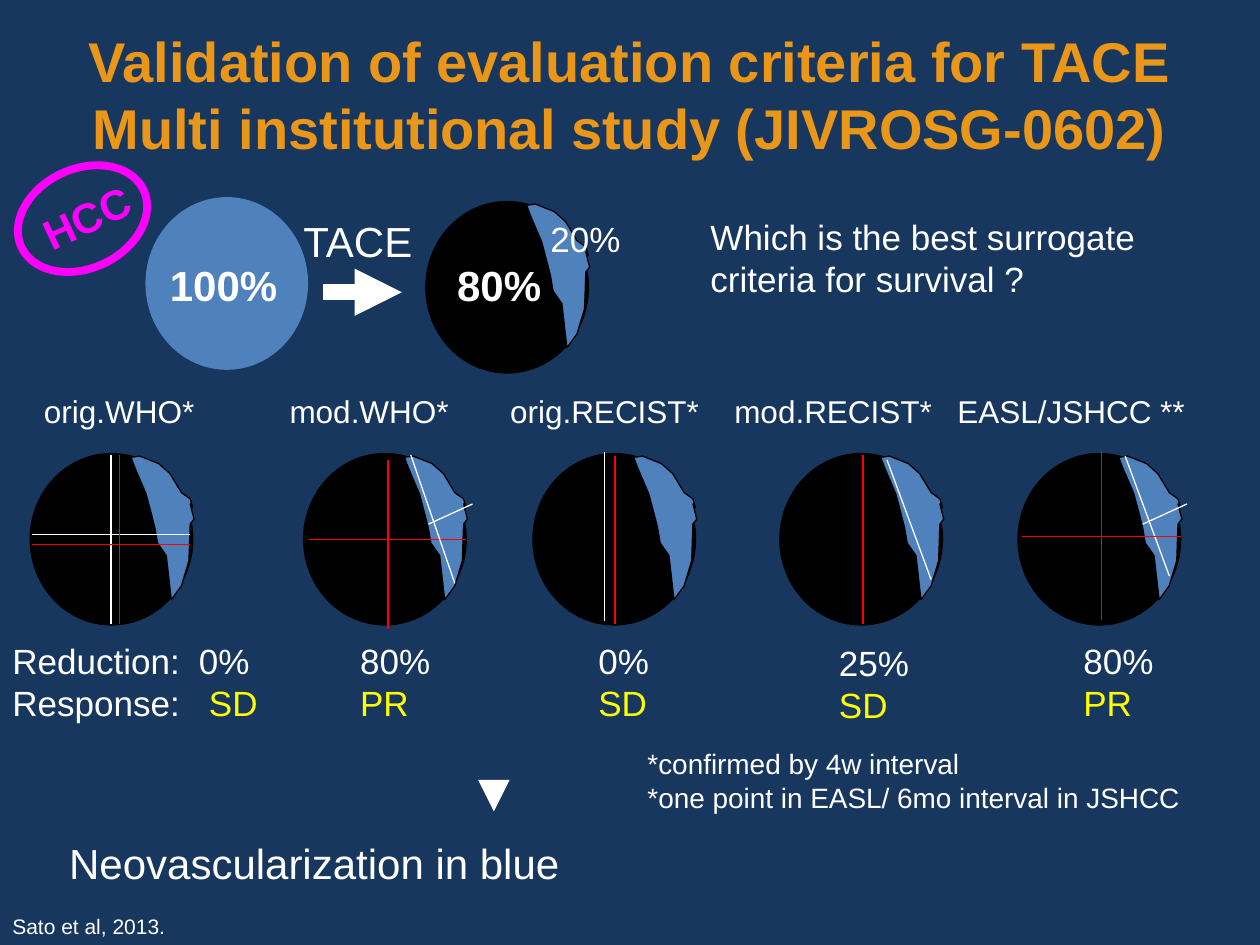
from lxml import etree
from pptx import Presentation
from pptx import util as u
from pptx.dml.color import RGBColor
from pptx.enum import shapes, text
from pptx.oxml.ns import qn

COLS, ROWS = 10, 7.5
WHITE, BLACK, RED, BLUE = "FFFFFF", "000000", "FF0000", "4F81BD"
PINK, GOLD, LEMON, NAVY = "FF00FF", "E99619", "FFFF00", "17375E"

RIM = [
    (1.28, 0.42), (1.26, 0.35), (1.19, 0.3), (1.1, 0.15), (1.01, 0.07),
    (0.86, 0.01), (0.79, 0.02), (0.82, 0.1), (0.91, 0.31), (0.96, 0.5),
    (0.98, 0.58), (1, 0.7), (1.07, 0.8), (1.11, 1.15), (1.19, 1.04),
    (1.25, 0.84), (1.26, 0.55), (1.29, 0.51), (1.26, 0.39),
]
SHORT = (0.98, 0.55, 1.33, 0.39, WHITE)
TESTS = [
    (0.25, [(0.63, 0, 0.63, 1.34, WHITE), (0, 0.63, 1.26, 0.63, WHITE),
            (0.7, 0, 0.7, 1.34, RED), (0, 0.71, 1.26, 0.71, RED)]),
    (2.42, [(0.66, 0.04, 0.66, 1.38, RED), (0.03, 0.67, 1.28, 0.67, RED),
            (0.84, 0, 1.19, 1.02, WHITE), SHORT]),
    (6.2, [(0.65, 0, 0.65, 1.34, RED), (0.84, 0.04, 1.19, 0.99, WHITE)]),
    (4.24, [(0.64, 0.01, 0.64, 1.34, RED), (0.56, -0.02, 0.56, 1.32, WHITE)]),
    (8.09, [(0.84, 0.01, 1.19, 0.96, WHITE), SHORT,
            (0.65, -0.03, 0.65, 1.31, RED), (0.02, 0.65, 1.28, 0.65, RED)]),
]
SCORES = [(2.76, 5.03, 0.77, "80%", "PR"), (4.65, 5.03, 0.61, "0%", "SD"),
          (6.56, 5.04, 0.77, "25%", "SD"), (8.5, 5.03, 0.77, "80%", "PR")]


def hue(code):
    return RGBColor.from_string(code)


def grid(*cells):
    return [u.Inches(cell) for cell in cells]


def paint(item, fill, line, width):
    item.shadow.inherit = False
    if fill:
        item.fill.solid()
        item.fill.fore_color.rgb = hue(fill)
    else:
        item.fill.background()
    item.line.color.rgb = hue(line)
    item.line.width = u.Pt(width)


def disc(slide, box, fill, line, width=2.25, turn=0):
    item = slide.shapes.add_shape(shapes.MSO_SHAPE.OVAL, *grid(*box))
    paint(item, fill, line, width)
    item.rotation = turn


def tumor(slide, left, top):
    disc(slide, (left, top, 1.27, 1.34), BLACK, BLACK)
    first, *rest = [grid(left + x, top + y) for x, y in RIM]
    pen = slide.shapes.build_freeform(*first)
    pen.add_line_segments(rest)
    paint(pen.convert_to_shape(), BLUE, BLACK, 0.75)


def rule(slide, ends, color, width=0.75, arrow=False):
    item = slide.shapes.add_connector(shapes.MSO_CONNECTOR.STRAIGHT, *grid(*ends))
    item.line.color.rgb = hue(color)
    item.line.width = u.Pt(width)
    props = item._element.spPr
    if arrow:
        etree.SubElement(props.get_or_add_ln(), qn("a:tailEnd"), type="triangle")
    etree.SubElement(props, qn("a:effectLst"))


def add_tabs(para, stops):
    tabs = etree.SubElement(para._p.get_or_add_pPr(), qn("a:tabLst"))
    for stop in stops:
        etree.SubElement(tabs, qn("a:tab"), pos=str(u.Inches(stop)), algn="l")


def write(slide, box, *lines, size=20, color=WHITE, bold=False, wrap=False,
          turn=0, center=False, tabs=()):
    item = slide.shapes.add_textbox(*grid(*box))
    item.rotation = turn
    frame = item.text_frame
    frame.word_wrap = wrap
    if center:
        frame.vertical_anchor = text.MSO_ANCHOR.MIDDLE
    else:
        frame.auto_size = text.MSO_AUTO_SIZE.SHAPE_TO_FIT_TEXT
    for i, line in enumerate(lines):
        para = frame.add_paragraph() if i else frame.paragraphs[0]
        if center:
            para.alignment = text.PP_ALIGN.CENTER
        if tabs:
            add_tabs(para, tabs[i])
        for words, tint in [(line, color)] if isinstance(line, str) else line:
            run = para.add_run()
            run.text = words
            run.font.name = "Arial"
            run.font.size = u.Pt(size)
            run.font.bold = bold
            run.font.color.rgb = hue(tint)


def draw_top(slide):
    write(slide, (0.5, 0.12, 9, 1.25),
          "Validation of evaluation criteria for TACE Multi institutional study (JIVROSG-0602)",
          size=32, color=GOLD, bold=True, wrap=True, center=True)
    tumor(slide, 3.39, 1.61)
    disc(slide, (1.17, 1.58, 1.26, 1.34), BLUE, BLUE)
    rule(slide, (2.56, 2.32, 3.19, 2.32), WHITE, 9, True)
    write(slide, (1.25, 2.01, 1.09, 0.5), "100%", size=24, bold=True)
    write(slide, (3.53, 2.01, 0.88, 0.5), "80%", size=24, bold=True)
    write(slide, (4.27, 1.68, 0.77, 0.43), "20%")
    write(slide, (2.31, 1.66, 1.08, 0.5), "TACE", size=24)
    write(slide, (0.23, 1.47, 0.92, 0.51), "HCC", size=24, color=PINK, bold=True,
          wrap=True, turn=335)
    disc(slide, (0.12, 1.34, 1.07, 0.79), None, PINK, 4.5, 335)
    write(slide, (5.54, 1.66, 3.85, 0.77),
          "Which is the best surrogate criteria for survival ?", wrap=True)


def draw_tests(slide):
    top = 3.61
    write(slide, (0.25, 3.06, 9.36, 0.4),
          "orig.WHO*\tmod.WHO*\torig.RECIST*\tmod.RECIST*\tEASL/JSHCC **",
          size=18, wrap=True, tabs=[(1.95, 3.7, 5.48, 7.25)])
    for left, marks in TESTS:
        tumor(slide, left, top)
        for x, y, to_x, to_y, color in marks:
            rule(slide, (left + x, top + y, left + to_x, top + to_y), color)
    write(slide, (0, 5.03, 2.17, 0.77), "Reduction:\t0%",
          [("Response:\t", WHITE), ("SD", LEMON)], wrap=True, tabs=[(1.48,), (1.56,)])
    for left, high, width, drop, grade in SCORES:
        write(slide, (left, high, width, 0.77), drop, [(grade, LEMON)])


def draw_notes(slide):
    write(slide, (5.04, 5.88, 4.48, 0.64), "*confirmed by 4w interval",
          "*one point in EASL/ 6mo interval in JSHCC", size=16)
    rule(slide, (3.92, 6.2, 3.92, 6.44), WHITE, 6, True)
    write(slide, (0.45, 6.6, 4.75, 0.5), "Neovascularization in blue", size=24, wrap=True)
    write(slide, (0, 7.2, 1.43, 0.3), "Sato et al, 2013.", size=12)


def main():
    deck = Presentation()
    deck.slide_width, deck.slide_height = grid(COLS, ROWS)
    slide = deck.slides.add_slide(deck.slide_layouts[6])
    slide.background.fill.solid()
    slide.background.fill.fore_color.rgb = hue(NAVY)
    draw_top(slide)
    draw_tests(slide)
    draw_notes(slide)
    deck.save("out.pptx")


if __name__ == "__main__":
    main()
